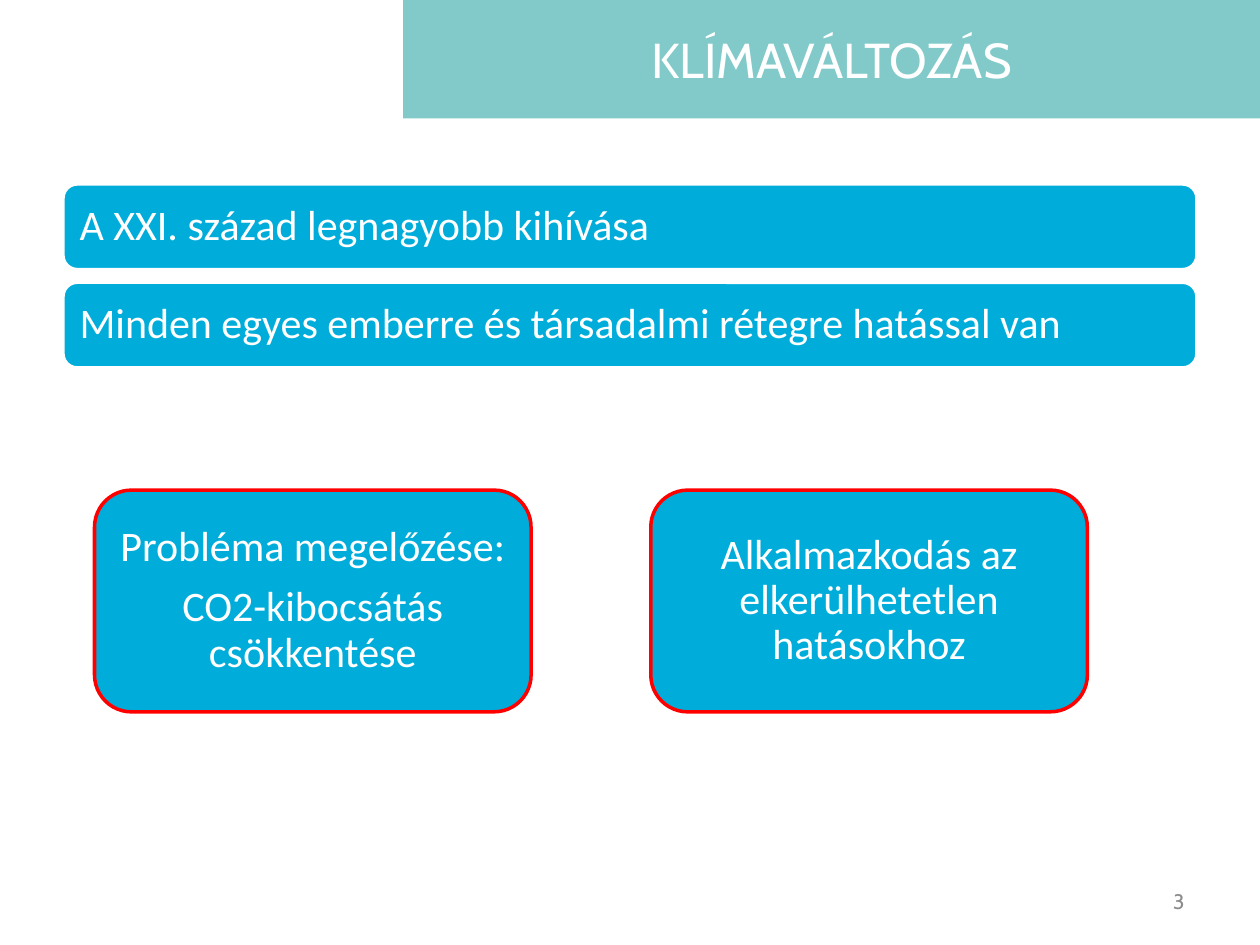
from dataclasses import dataclass

from pptx import Presentation
from pptx.dml.color import RGBColor
from pptx.enum.shapes import MSO_SHAPE as Shape
from pptx.enum.text import MSO_ANCHOR as Anchor, PP_ALIGN as Align
from pptx.util import Inches, Pt

COLS, ROWS, UNIT = 100, 75, 0.1


@dataclass(frozen=True)
class Theme:
    band: str = "81CAC9"
    panel: str = "00ADDA"
    accent: str = "FF0000"
    white: str = "FFFFFF"
    grey: str = "8C8C8C"
    head_font: str = "Cabin"
    body_font: str = "Calibri"
    title: int = 28
    body: int = 24
    small: int = 12
    line: int = 2


@dataclass(frozen=True)
class Box:
    col: float
    row: float
    cols: float
    rows: float

    def emu(self):
        return [Inches(n * UNIT) for n in (self.col, self.row, self.cols, self.rows)]


T = Theme()


def rgb(color):
    return RGBColor.from_string(color)


def write(sp, *lines, size=T.body, font=T.body_font, color=T.white,
          align=Align.LEFT, spacing=1.0, after=0, inset=0.1):
    tf = sp.text_frame
    tf.word_wrap = True
    tf.vertical_anchor = Anchor.MIDDLE
    tf.margin_left = tf.margin_right = Inches(inset)
    tf.margin_top = tf.margin_bottom = Inches(inset / 2)
    for i, line in enumerate(lines):
        p = tf.paragraphs[0] if i == 0 else tf.add_paragraph()
        p.alignment = align
        p.line_spacing = spacing
        p.space_after = Pt(after)
        r = p.add_run()
        r.text = line
        r.font.size = Pt(size)
        r.font.name = font
        r.font.color.rgb = rgb(color)


def add_panel(s, box, kind, fill, line=None):
    sp = s.shapes.add_shape(kind, *box.emu())
    sp.shadow.inherit = False
    sp.fill.solid()
    sp.fill.fore_color.rgb = rgb(fill)
    if line:
        sp.line.color.rgb = rgb(line)
        sp.line.width = Pt(T.line)
    else:
        sp.line.fill.background()
    return sp


def add_header(s, box, title):
    sp = add_panel(s, box, Shape.RECTANGLE, T.band)
    write(sp, title, size=T.title, font=T.head_font, align=Align.CENTER)


def add_statements(s, box, statements, gap=1):
    rows = (box.rows - gap * (len(statements) - 1)) / len(statements)
    for i, statement in enumerate(statements):
        bar = Box(box.col, box.row + i * (rows + gap), box.cols, rows)
        sp = add_panel(s, bar, Shape.ROUNDED_RECTANGLE, T.panel, T.white)
        write(sp, statement, spacing=0.9, after=T.body * 0.35)


def add_responses(s, box, responses, gap=9.5):
    cols = (box.cols - gap * (len(responses) - 1)) / len(responses)
    for i, lines in enumerate(responses):
        card = Box(box.col + i * (cols + gap), box.row, cols, box.rows)
        sp = add_panel(s, card, Shape.ROUNDED_RECTANGLE, T.panel, T.accent)
        write(sp, *lines, align=Align.CENTER, spacing=0.9, after=T.body * 0.35)


def add_page_number(s, box, number):
    sp = s.shapes.add_textbox(*box.emu())
    write(sp, number, size=T.small, font=T.head_font, color=T.grey, align=Align.RIGHT)


def main():
    prs = Presentation()
    prs.slide_width = Inches(COLS * UNIT)
    prs.slide_height = Inches(ROWS * UNIT)
    s = prs.slides.add_slide(prs.slide_layouts[6])

    add_header(s, Box(32, 0, 68, 9.4), "KLÍMAVÁLTOZÁS")
    add_statements(s, Box(5, 14.6, 90, 14.6), [
        "A XXI. század legnagyobb kihívása",
        "Minden egyes emberre és társadalmi rétegre hatással van",
    ])
    add_responses(s, Box(7.5, 38.9, 78.8, 17.6), [
        ["Probléma megelőzése:", "CO2-kibocsátás csökkentése"],
        ["Alkalmazkodás az elkerülhetetlen hatásokhoz"],
    ])
    add_page_number(s, Box(71.7, 69.5, 23.3, 4), "3")
    prs.save("out.pptx")


if __name__ == "__main__":
    main()
